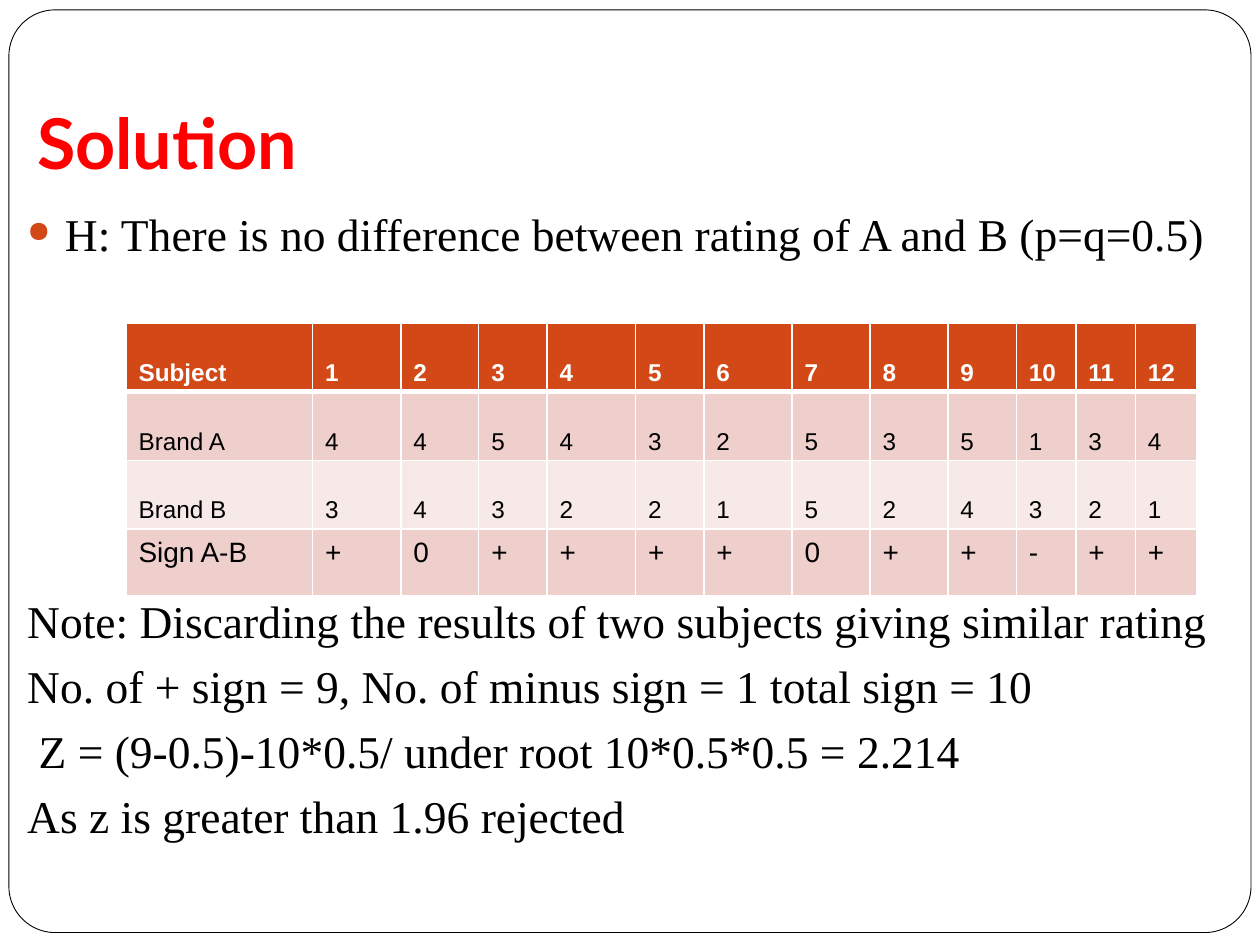
import pptx
import pptx.dml.color
import pptx.enum.shapes
import pptx.enum.text
import pptx.oxml
import pptx.oxml.ns
import pptx.util
from lxml import etree

Cm, Pt = pptx.util.Cm, pptx.util.Pt
ALIGN = pptx.enum.text.PP_ALIGN
ANCHOR = pptx.enum.text.MSO_ANCHOR
A = pptx.oxml.ns.nsdecls("a")

COLORS = {
    "paper": "FFFFFF",
    "ink": "000000",
    "title": "FF0000",
    "accent": "D34817",
    "band_dark": "EFCFCC",
    "band_light": "F7E9E8",
}

SUBJECTS = ["Subject", *(str(n) for n in range(1, 13))]
RATINGS_A = ["Brand A", *"445432535134"]
RATINGS_B = ["Brand B", *"343221524321"]
SIGNS = ["Sign A-B", *"+0++++0++-++"]
COL_WIDTHS = [3.76, 1.78, 1.57, 1.38, 1.78, 1.38, 1.78, 1.57, 1.57, 1.38, 1.2, 1.2, 1.24]

HYPOTHESIS = "H: There is no difference between rating of A and B (p=q=0.5)"
WORKING = [
    "Note: Discarding the results of two subjects giving similar rating",
    "No. of + sign = 9, No. of minus sign = 1 total sign = 10",
    " Z = (9-0.5)-10*0.5/ under root 10*0.5*0.5 = 2.214",
    "As z is greater than 1.96 rejected",
]


def rgb(name):
    return pptx.dml.color.RGBColor.from_string(COLORS[name])


def set_attrs(obj, values):
    for name, value in values.items():
        setattr(obj, name, value)


def add_run(p, text, color, **fmt):
    r = p.add_run()
    r.text = text
    set_attrs(r.font, fmt)
    r.font.color.rgb = rgb(color)
    return r


def add_text_frame(slide, box, **fmt):
    tf = slide.shapes.add_textbox(*map(Cm, box)).text_frame
    set_attrs(tf, {"word_wrap": True, **fmt})
    return tf


def add_frame(slide, box):
    sp = slide.shapes.add_shape(
        pptx.enum.shapes.MSO_SHAPE.ROUNDED_RECTANGLE, *map(Cm, box))
    sp.shadow.inherit = False
    sp.adjustments[0] = 0.05
    sp.fill.solid()
    sp.fill.fore_color.rgb = rgb("paper")
    sp.line.color.rgb = rgb("ink")
    sp.line.width = Pt(0.5)


def add_title(slide, box, text):
    tf = add_text_frame(slide, box, vertical_anchor=ANCHOR.BOTTOM, margin_bottom=Cm(0.25))
    add_run(tf.paragraphs[0], text, "title", name="Lato", size=Pt(40), bold=True)


def add_bullet(p):
    pPr = p._p.get_or_add_pPr()
    pPr.set("marL", str(Cm(0.76)))
    pPr.set("indent", str(-Cm(0.76)))
    for xml in (
        f'<a:buClr {A}><a:srgbClr val="{COLORS["accent"]}"/></a:buClr>',
        f'<a:buSzPct {A} val="65000"/>',
        f'<a:buChar {A} char="●"/>',
    ):
        pPr.append(pptx.oxml.parse_xml(xml))


def add_body(slide, box):
    tf = add_text_frame(slide, box, margin_top=Cm(0.15))
    fmt = {"name": "Times New Roman", "size": Pt(26)}
    p = tf.paragraphs[0]
    add_bullet(p)
    add_run(p, HYPOTHESIS, "ink", **fmt)
    # The first line of working clears the table
    for i, text in enumerate(WORKING):
        p = tf.add_paragraph()
        p.space_before = Pt(5.8 if i else 190)
        p.alignment = ALIGN.JUSTIFY if i == 1 else ALIGN.LEFT
        add_run(p, text, "ink", **fmt)


def set_borders(cell, widths):
    tcPr = cell._tc.get_or_add_tcPr()
    for side, width in widths.items():
        ln = etree.SubElement(tcPr, pptx.oxml.ns.qn(f"a:ln{side}"), w=str(Pt(width)))
        ln.append(pptx.oxml.parse_xml(
            f'<a:solidFill {A}><a:srgbClr val="{COLORS["paper"]}"/></a:solidFill>'))


def add_ratings_table(slide, box):
    # Text, fill, font colour, size, bold, subscript
    rows = [
        (SUBJECTS, "accent", "paper", 24, True, True),
        (RATINGS_A, "band_dark", "ink", 24, False, True),
        (RATINGS_B, "band_light", "ink", 24, False, True),
        (SIGNS, "band_dark", "ink", 16, False, False),
    ]
    table = slide.shapes.add_table(len(rows), len(COL_WIDTHS), *map(Cm, box)).table
    for col, width in zip(table.columns, COL_WIDTHS):
        col.width = Cm(width)
    for i, (texts, fill, color, size, bold, subscript) in enumerate(rows):
        table.rows[i].height = Cm(box[3] / len(rows))
        borders = {"L": 1, "R": 1, "T": 3 if i == 1 else 1, "B": 3 if i == 0 else 1}
        for j, text in enumerate(texts):
            cell = table.cell(i, j)
            set_borders(cell, borders)
            cell.margin_bottom = Cm(0.02)
            cell.fill.solid()
            cell.fill.fore_color.rgb = rgb(fill)
            p = cell.text_frame.paragraphs[0]
            set_attrs(p, {"line_spacing": 1.07, "space_after": Pt(8)})
            r = add_run(p, text, color, name="Arial", size=Pt(size), bold=bold)
            if subscript:
                r._r.get_or_add_rPr().set("baseline", "-25000")


def main():
    prs = pptx.Presentation()
    prs.slide_width, prs.slide_height = Cm(25.4), Cm(19.05)
    slide = prs.slides.add_slide(prs.slide_layouts[6])
    add_frame(slide, (0.18, 0.2, 25.04, 18.6))
    add_title(slide, (0.5, 0.76, 23.62, 3.18), "Solution")
    add_body(slide, (0.3, 4.01, 24.8, 14.27))
    add_ratings_table(slide, (2.54, 6.51, sum(COL_WIDTHS), 5.36))
    prs.save("out.pptx")


if __name__ == "__main__":
    main()
